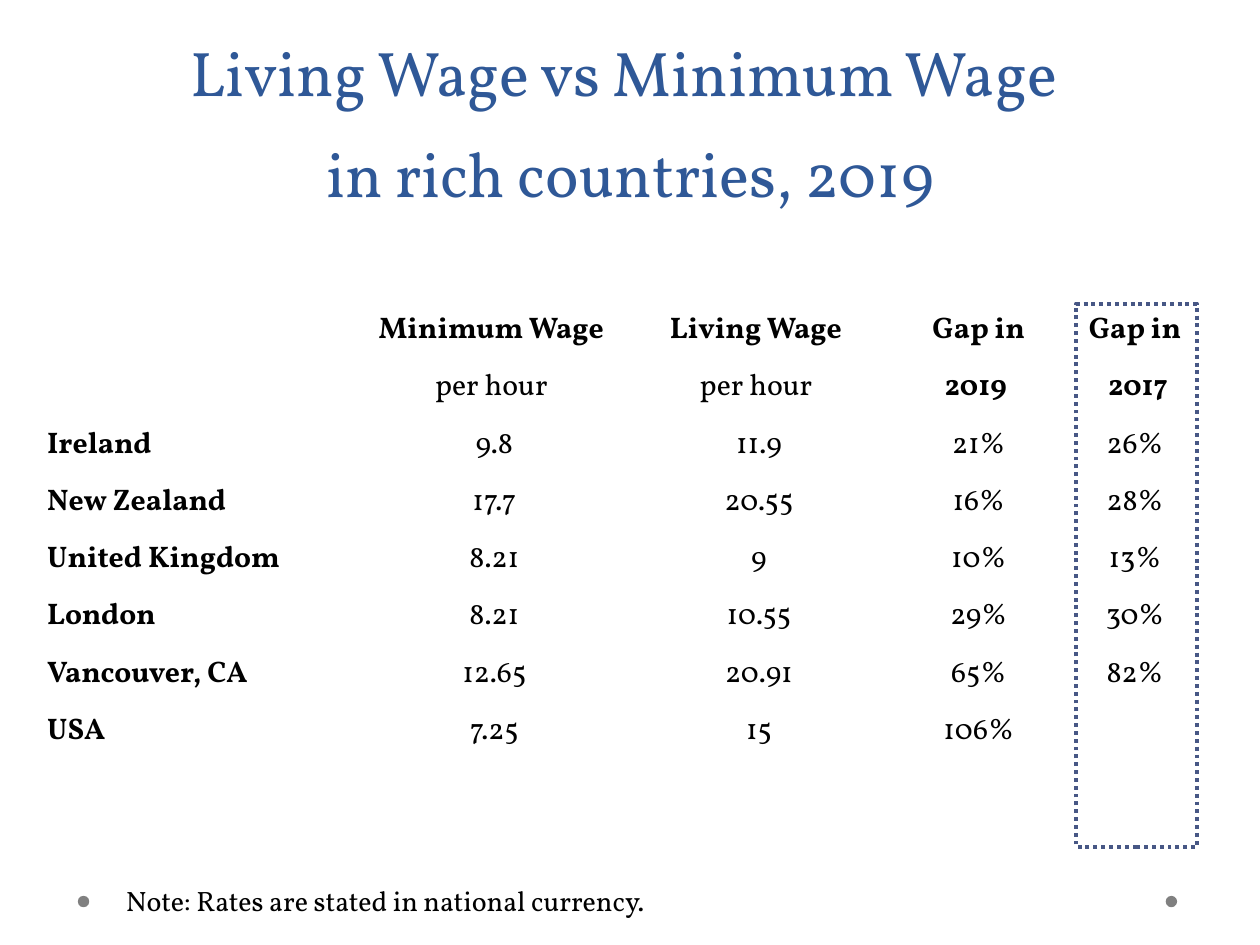
import pptx
import pptx.dml.color
import pptx.enum.dml
import pptx.enum.shapes
import pptx.enum.text
import pptx.util

Cm = pptx.util.Cm
Pt = pptx.util.Pt
PP_ALIGN = pptx.enum.text.PP_ALIGN
MSO_ANCHOR = pptx.enum.text.MSO_ANCHOR
MSO_AUTO_SIZE = pptx.enum.text.MSO_AUTO_SIZE
MSO_SHAPE = pptx.enum.shapes.MSO_SHAPE

FONT = "Vollkorn"
COLORS = {"title": "2F5897", "text": "000000", "frame": "475785", "dot": "808080"}

COLUMN_WIDTHS = [6.58, 4.93, 5.74, 3.12, 3.18]
HEADER_HEIGHT = 2.16
ROWS = [
    ["", "Minimum Wage ", "Living Wage ", "Gap in", "Gap in"],
    ["", "per hour ", "per hour ", "2019 ", " 2017"],
    ["Ireland", "9.8", "11.9", "21%", "26%"],
    ["New Zealand", "17.7", "20.55", "16%", "28%"],
    ["United Kingdom", "8.21", "9", "10%", "13%"],
    ["London", "8.21", "10.55", "29%", "30%"],
    ["Vancouver, CA", "12.65", "20.91", "65%", "82%"],
    ["USA", "7.25", "15", "106%", ""],
    ["", "", "", "", ""],
]


def rgb(name):
    return pptx.dml.color.RGBColor.from_string(COLORS[name])


def format_runs(paragraph, size, color="text", bold=False):
    for run in paragraph.runs:
        run.font.name = FONT
        run.font.size = Pt(size)
        run.font.bold = bold
        run.font.color.rgb = rgb(color)


def add_dots(slide, left, top, width, size):
    """Place one dot at each end of a footer strip."""
    for dot_left in (left, left + width - size):
        dot = slide.shapes.add_shape(
            MSO_SHAPE.OVAL, Cm(dot_left), Cm(top), Cm(size), Cm(size))
        dot.shadow.inherit = False
        dot.fill.solid()
        dot.fill.fore_color.rgb = rgb("dot")
        dot.line.fill.background()


def add_title(slide, left, top, width, height):
    title = slide.shapes.title
    title.left, title.top = Cm(left), Cm(top)
    title.width, title.height = Cm(width), Cm(height)
    frame = title.text_frame
    frame.text = "Living Wage vs Minimum Wage \vin rich countries, 2019"
    frame.auto_size = MSO_AUTO_SIZE.NONE
    frame.vertical_anchor = MSO_ANCHOR.BOTTOM
    paragraph = frame.paragraphs[0]
    paragraph.alignment = PP_ALIGN.CENTER
    paragraph.line_spacing = Pt(58)
    format_runs(paragraph, 36, "title")


def is_bold(row, column):
    """Tell whether a cell is a header, a place name or a year."""
    return row == 0 or column == 0 or (row == 1 and column >= 3)


def add_wage_table(slide, left, top, width, height):
    table = slide.shapes.add_table(
        len(ROWS), len(COLUMN_WIDTHS), Cm(left), Cm(top), Cm(width), Cm(height)).table
    table.first_row = False
    table.horz_banding = False
    for column, column_width in zip(table.columns, COLUMN_WIDTHS):
        column.width = Cm(column_width)
    body_height = (height - HEADER_HEIGHT) / (len(ROWS) - 1)
    for row_index, texts in enumerate(ROWS):
        table.rows[row_index].height = Cm(body_height if row_index else HEADER_HEIGHT)
        for column_index, text in enumerate(texts):
            cell = table.cell(row_index, column_index)
            cell.fill.background()
            cell.vertical_anchor = MSO_ANCHOR.BOTTOM
            cell.margin_left = cell.margin_right = cell.margin_top = Cm(0.03)
            cell.margin_bottom = 0
            if text:
                cell.text_frame.text = text
                paragraph = cell.text_frame.paragraphs[0]
                paragraph.alignment = PP_ALIGN.CENTER if column_index else PP_ALIGN.LEFT
                format_runs(paragraph, 17, bold=is_bold(row_index, column_index))


def add_note(slide, left, top, width, height):
    note = slide.shapes.add_textbox(Cm(left), Cm(top), Cm(width), Cm(height))
    frame = note.text_frame
    frame.text = "Note: Rates are stated in national currency."
    frame.word_wrap = False
    frame.auto_size = MSO_AUTO_SIZE.SHAPE_TO_FIT_TEXT
    format_runs(frame.paragraphs[0], 16)


def add_column_frame(slide, left, top, width, height):
    frame = slide.shapes.add_shape(
        MSO_SHAPE.RECTANGLE, Cm(left), Cm(top), Cm(width), Cm(height))
    frame.shadow.inherit = False
    frame.fill.background()
    frame.line.color.rgb = rgb("frame")
    frame.line.width = Pt(2.25)
    frame.line.dash_style = pptx.enum.dml.MSO_LINE.ROUND_DOT


def main():
    presentation = pptx.Presentation()
    presentation.slide_width = Cm(25.4)
    presentation.slide_height = Cm(19.05)
    slide = presentation.slides.add_slide(presentation.slide_layouts[5])
    add_dots(slide, 1.57, 18.06, 22.16, 0.23)
    add_wage_table(slide, 0.92, 4.93, sum(COLUMN_WIDTHS), 11.4)
    add_title(slide, 1.27, -0.08, 22.86, 4.45)
    add_note(slide, 2.29, 17.68, 11.43, 0.94)
    add_column_frame(slide, 21.69, 6.12, 2.44, 10.95)
    presentation.save("out.pptx")


if __name__ == "__main__":
    main()
